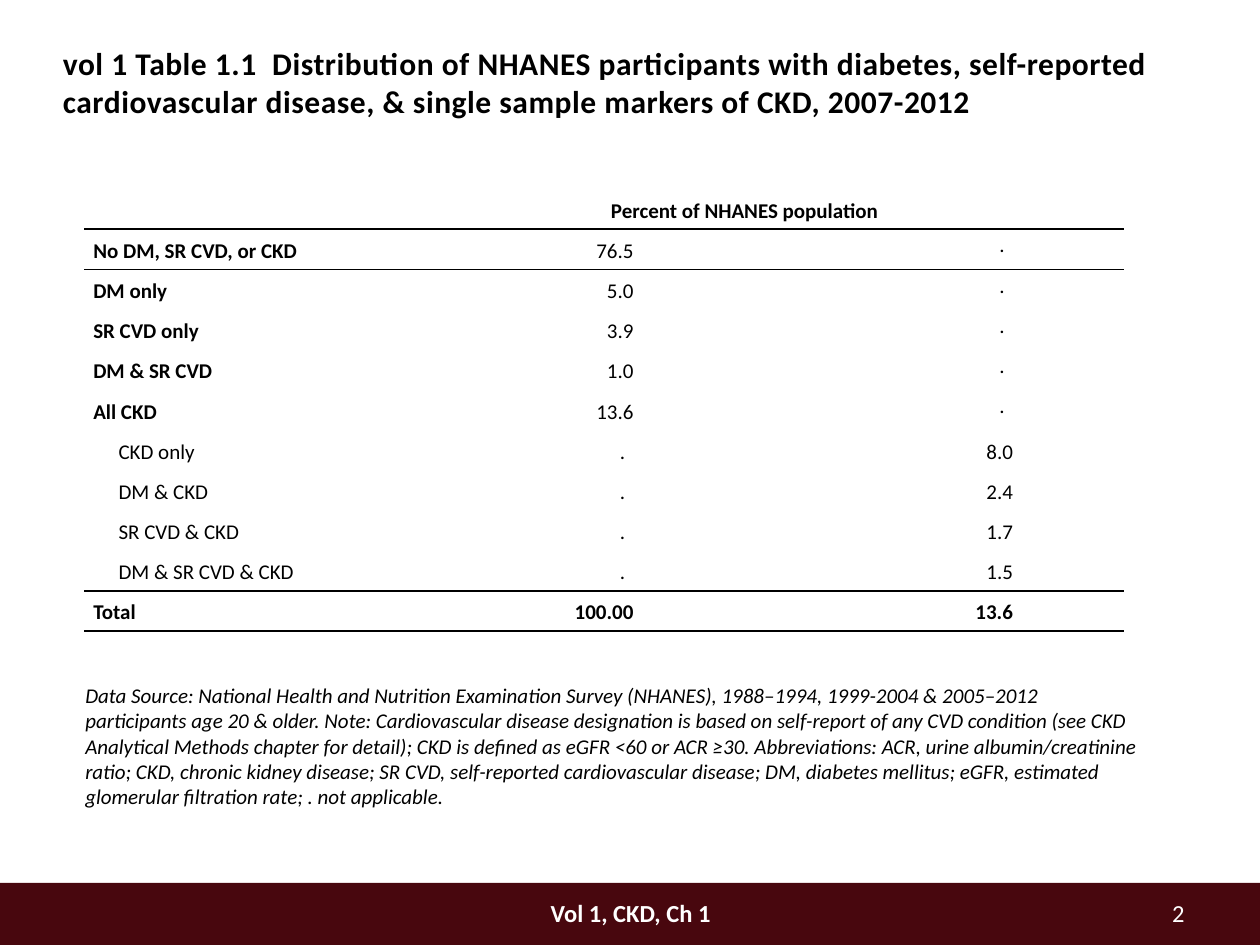
"""Build the slide with the table of NHANES participants by disease group."""
import lxml.etree
import pptx
import pptx.dml.color
import pptx.enum.shapes
import pptx.enum.text
import pptx.oxml.ns
import pptx.util

Cm = pptx.util.Cm
Pt = pptx.util.Pt
ALIGN = pptx.enum.text.PP_ALIGN
ANCHOR = pptx.enum.text.MSO_ANCHOR
BLACK = pptx.dml.color.RGBColor(0x00, 0x00, 0x00)
WHITE = pptx.dml.color.RGBColor(0xFF, 0xFF, 0xFF)
MAROON = pptx.dml.color.RGBColor(0x48, 0x07, 0x0E)
NO_STYLE = "{2D5ABB26-0587-4C30-8999-92F81FD0307C}"
qn = pptx.oxml.ns.qn


def write(frame, text, align, size, color=BLACK, **formats):
    para = frame.paragraphs[0]
    para.alignment = align
    span = para.add_run()
    span.text = text
    formats = {"name": "Calibri", "size": Pt(size), "bold": False} | formats
    for name, value in formats.items():
        setattr(span.font, name, value)
    span.font.color.rgb = color
    return para


def draw_border(cell, side):
    properties = cell._tc.get_or_add_tcPr()
    line = lxml.etree.Element(qn(f"a:{side}"), w=str(Pt(1)))
    fill = lxml.etree.SubElement(line, qn("a:solidFill"))
    lxml.etree.SubElement(fill, qn("a:srgbClr"), val=str(BLACK))
    position = len(properties.findall(qn("a:lnT")))
    properties.insert(position, line)


deck = pptx.Presentation()
deck.slide_width, deck.slide_height = Cm(25.4), Cm(19.05)
page = deck.slides.add_slide(deck.slide_layouts[6])

band = page.shapes.add_shape(
    pptx.enum.shapes.MSO_SHAPE.RECTANGLE, 0, Cm(17.8), deck.slide_width, Cm(1.25)
)
band.shadow.inherit = False
band.fill.solid()
band.fill.fore_color.rgb = MAROON
band.line.fill.background()

title = (
    "vol 1 Table 1.1  Distribution of NHANES participants with diabetes, self-reported "
    "cardiovascular disease, & single sample markers of CKD, 2007-2012"
)
note = (
    "Data Source: National Health and Nutrition Examination Survey (NHANES), 1988–1994, "
    "1999-2004 & 2005–2012 participants age 20 & older. Note: Cardiovascular disease "
    "designation is based on self-report of any CVD condition (see CKD Analytical Methods "
    "chapter for detail); CKD is defined as eGFR <60 or ACR ≥30. Abbreviations: ACR, urine "
    "albumin/creatinine ratio; CKD, chronic kidney disease; SR CVD, self-reported "
    "cardiovascular disease; DM, diabetes mellitus; eGFR, estimated glomerular filtration "
    "rate; . not applicable."
)
texts = [
    ((21.59, 17.98, 2.54, 0.76), "2", ALIGN.RIGHT, 14, {"color": WHITE}),
    ((9.96, 17.98, 5.51, 0.76), "Vol 1, CKD, Ch 1", ALIGN.CENTER, 14,
     {"color": WHITE, "bold": True}),
    ((1.02, 0.76, 23.37, 1.57), title, ALIGN.LEFT, 18, {"bold": True}),
    ((1.47, 13.64, 21.79, 3.76), note, ALIGN.LEFT, 12, {"italic": True}),
]
for place, text, align, size, formats in texts:
    box = page.shapes.add_textbox(*map(Cm, place))
    box.text_frame.word_wrap = True
    para = write(box.text_frame, text, align, size, **formats)
    if text == title:
        para.runs[0]._r.get_or_add_rPr().set("spc", "30")

rows = [
    ("No DM, SR CVD, or CKD", "76.5", "."),
    ("DM only", "5.0", "."),
    ("SR CVD only", "3.9", "."),
    ("DM & SR CVD", "1.0", "."),
    ("All CKD", "13.6", "."),
    ("CKD only", ".", "8.0"),
    ("DM & CKD", ".", "2.4"),
    ("SR CVD & CKD", ".", "1.7"),
    ("DM & SR CVD & CKD", ".", "1.5"),
    ("Total", "100.00", "13.6"),
]
grid = [("", "Percent of NHANES population", ""), *rows]
widths = [5.66, 7.65, 7.65]
height = 0.81
frame = page.shapes.add_table(
    len(grid), len(widths), Cm(1.7), Cm(3.81), Cm(sum(widths)), Cm(height * len(grid))
)
table = frame.table
table.first_row = table.horz_banding = False
table._tbl.tblPr.find(qn("a:tableStyleId")).text = NO_STYLE
for column, width in zip(table.columns, widths):
    column.width = Cm(width)
for row in table.rows:
    row.height = Cm(height)
table.cell(0, 1).merge(table.cell(0, 2))

total = len(grid) - 1
for r, values in enumerate(grid):
    for c, value in enumerate(values):
        cell = table.cell(r, c)
        number = r > 0 and c > 0
        top_dot = value == "." and c == 2
        right = 2.41 if value == "." else 2.24 if number else 0.18
        layout = {
            "margin_left": Cm(0 if value == "." else 0.18),
            "margin_right": Cm(right),
            "margin_top": 0,
            "margin_bottom": 0,
            "vertical_anchor": ANCHOR.TOP if top_dot else ANCHOR.MIDDLE,
        }
        for name, setting in layout.items():
            setattr(cell, name, setting)
        cell.fill.background()
        if r in (1, total):
            draw_border(cell, "lnT")
        if r in (0, total - 1, total):
            draw_border(cell, "lnB")
        if not value:
            continue
        align = ALIGN.RIGHT if number else ALIGN.LEFT if c == 0 else ALIGN.CENTER
        detail = c == 0 and values[1] == "."
        bold = r in (0, total) or (c == 0 and not detail)
        para = write(cell.text_frame, value, align, 12, bold=bold)
        para.line_spacing = 1.15
        if detail:
            para._p.get_or_add_pPr().set("marL", str(Cm(0.51)))

deck.save("out.pptx")
